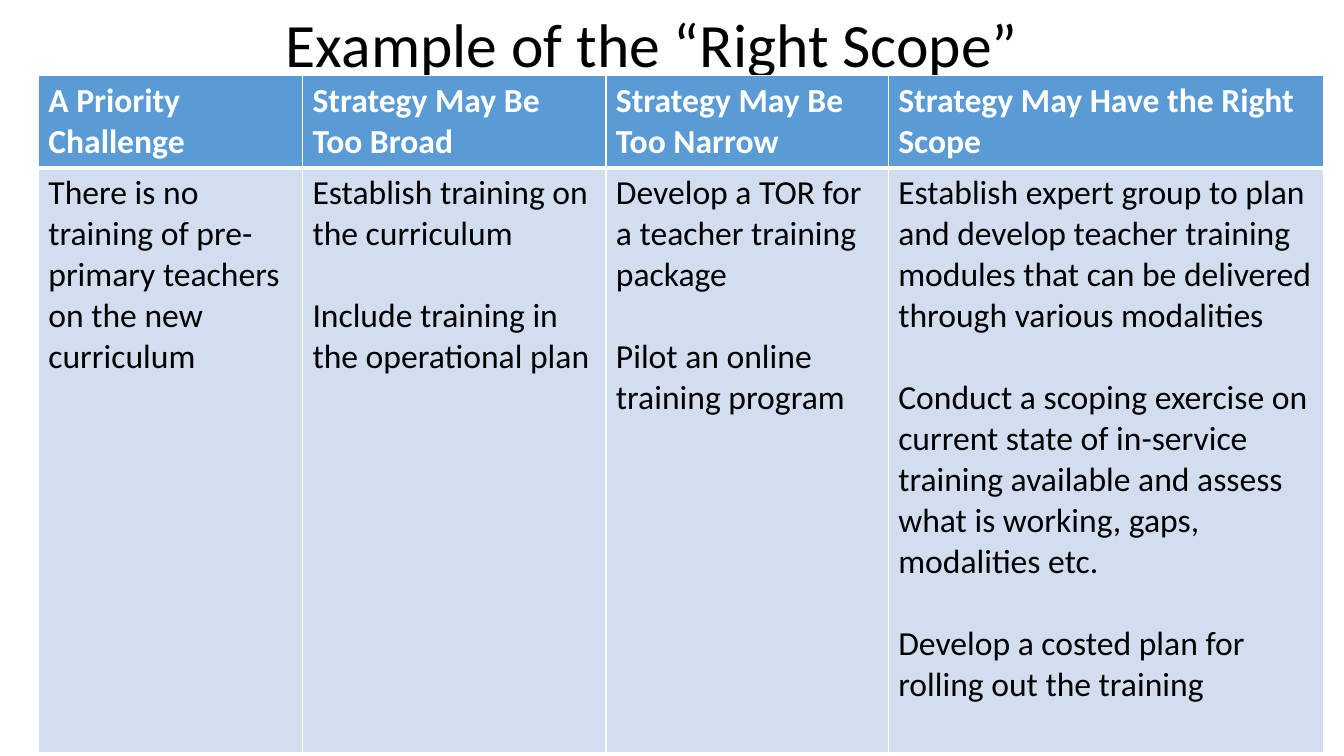
from lxml.etree import SubElement as Sub
from pptx import Presentation
from pptx.dml.color import RGBColor as Color
from pptx.enum.text import MSO_ANCHOR as Anchor, MSO_AUTO_SIZE as Auto, PP_ALIGN as Align
from pptx.oxml.ns import qn
from pptx.util import Inches, Pt

WHITE = Color(0xFF, 0xFF, 0xFF)
BLACK = Color(0x00, 0x00, 0x00)
BLUE = Color(0x5B, 0x9B, 0xD5)
PALE = Color(0xD2, 0xDE, 0xEF)

WIDTHS = [2.62, 3.01, 2.8, 4.32]
HEIGHTS = [0.89, 5.8]
HEADS = [
    "A Priority Challenge",
    "Strategy May Be Too Broad",
    "Strategy May Be Too Narrow",
    "Strategy May Have the Right Scope",
]
BODY = [
    ["There is no training of pre-primary teachers on the new curriculum"],
    ["Establish training on the curriculum",
     "Include training in the operational plan"],
    ["Develop a TOR for a teacher training package",
     "Pilot an online training program"],
    ["Establish expert group to plan and develop teacher training modules "
     "that can be delivered through various modalities",
     "Conduct a scoping exercise on current state of in-service training "
     "available and assess what is working, gaps, modalities etc.",
     "Develop a costed plan for rolling out the training"],
]


class Deck:
    face = "Calibri"
    size = 24
    gap = 29.3  # one line of cell text, in points

    def __init__(self):
        self.show = Presentation()
        self.show.slide_width = Inches(13.33)
        self.show.slide_height = Inches(7.5)
        self.slide = self.show.slides.add_slide(self.show.slide_layouts[5])

    def style(self, para, size, color, bold=False):
        font = para.font
        font.name, font.size, font.bold = self.face, Pt(size), bold
        font.color.rgb = color

    def title(self, text, left, top, width, height):
        box = self.slide.shapes.title
        box.left, box.top = Inches(left), Inches(top)
        box.width, box.height = Inches(width), Inches(height)
        frame = box.text_frame
        frame.text = text
        frame.auto_size = Auto.NONE
        frame.word_wrap = True
        frame.vertical_anchor = Anchor.MIDDLE
        para = frame.paragraphs[0]
        para.alignment = Align.CENTER
        para.line_spacing = 0.9
        self.style(para, 44, BLACK)

    def edges(self, cell, top, bottom):
        props = cell._tc.get_or_add_tcPr()
        for tag, width in (("L", 1), ("R", 1), ("T", top), ("B", bottom)):
            line = Sub(props, qn(f"a:ln{tag}"), w=str(Pt(width)))
            fill = Sub(line, qn("a:solidFill"))
            Sub(fill, qn("a:srgbClr"), val=str(WHITE))

    def cell(self, cell, texts, fill, color, bold, top, bottom):
        self.edges(cell, top, bottom)
        cell.fill.solid()
        cell.fill.fore_color.rgb = fill
        frame = cell.text_frame
        frame.text = "\n".join(texts)
        for i, para in enumerate(frame.paragraphs):
            if i:
                para.space_before = Pt(self.gap)
            self.style(para, self.size, color, bold)

    def table(self, left, top, widths, heights, heads, body):
        grid = self.slide.shapes.add_table(
            len(heights), len(widths), Inches(left), Inches(top),
            Inches(sum(widths)), Inches(sum(heights))).table
        for row, height in zip(grid.rows, heights):
            row.height = Inches(height)
        for i, width in enumerate(widths):
            grid.columns[i].width = Inches(width)
            self.cell(grid.cell(0, i), [heads[i]], BLUE, WHITE, True, 1, 3)
            self.cell(grid.cell(1, i), body[i], PALE, BLACK, False, 3, 1)


def main():
    deck = Deck()
    # Heading
    deck.title("Example of the “Right Scope”", 0.72, 0, 11.5, 0.95)
    # Comparison of strategies
    deck.table(0.38, 0.75, WIDTHS, HEIGHTS, HEADS, BODY)
    deck.show.save("out.pptx")


if __name__ == "__main__":
    main()
